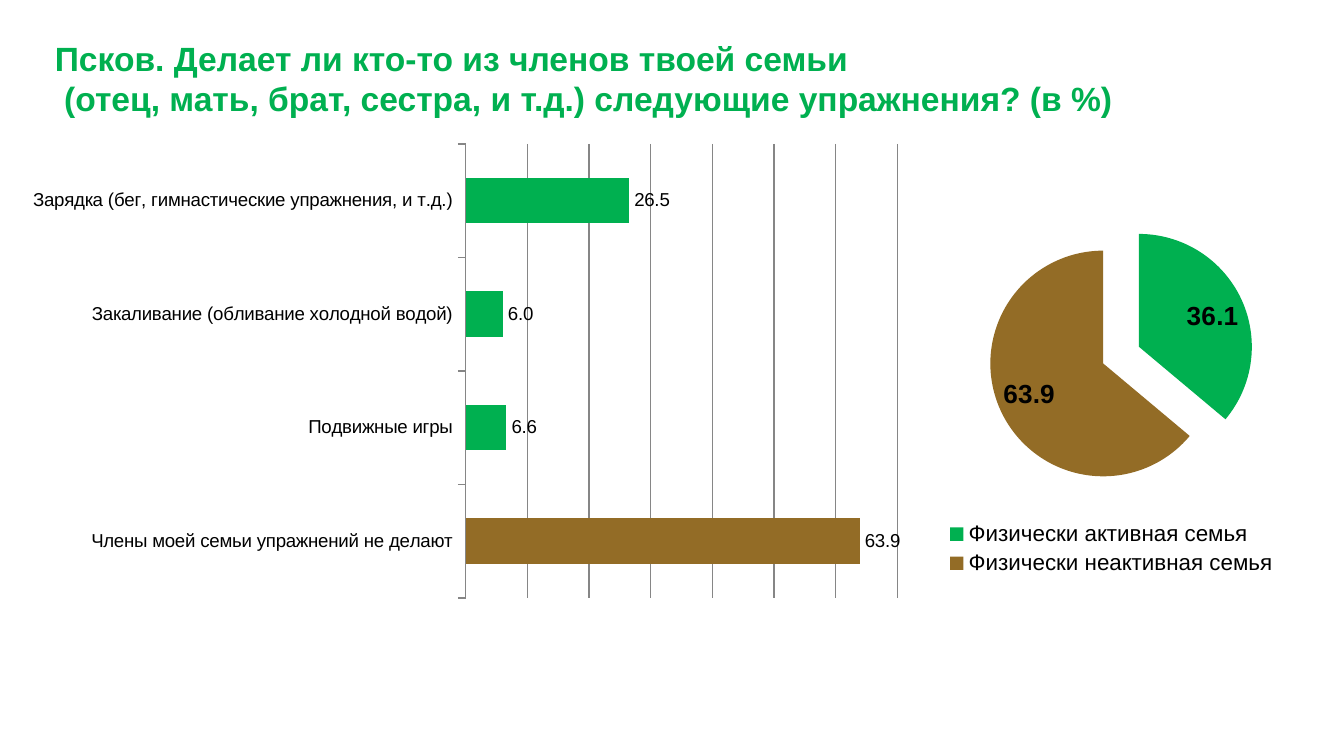
from lxml import etree
from pptx import Presentation
from pptx.chart.data import CategoryChartData
from pptx.dml.color import RGBColor
from pptx.enum import chart as ch, text
from pptx.oxml.ns import qn
from pptx.util import Inches, Pt

COLORS = {"active": "00B050", "inactive": "936C26", "text": "000000", "grid": "868686"}
TITLE = [
    "Псков. Делает ли кто-то из членов твоей семьи",
    " (отец, мать, брат, сестра, и т.д.) следующие упражнения? (в %)",
]
EXERCISES = {
    "box": (0.12, 1, 6.69, 3.52),
    "kind": ch.XL_CHART_TYPE.BAR_CLUSTERED,
    "plot": (0.5, 0.02, 0.48, 0.96),
    "points": [
        ("Зарядка (бег, гимнастические упражнения, и т.д.)", 26.5, "active"),
        ("Закаливание (обливание холодной водой)", 6, "active"),
        ("Подвижные игры", 6.6, "active"),
        ("Члены моей семьи упражнений не делают", 63.9, "inactive"),
    ],
    "label": {"size": Pt(10), "bold": False},
    "position": ch.XL_LABEL_POSITION.OUTSIDE_END,
}
FAMILIES = {
    "box": (6.73, 1.32, 3.08, 3),
    "kind": ch.XL_CHART_TYPE.PIE,
    "plot": (0.04, 0.1, 0.93, 0.7),
    "points": [
        ("Физически активная семья", 36.1, "active"),
        ("Физически неактивная семья", 63.9, "inactive"),
    ],
    "label": {"size": Pt(14), "bold": True},
    "position": ch.XL_LABEL_POSITION.BEST_FIT,
}
SERIES_EXPLOSION, INACTIVE_EXPLOSION = 25, 10


def rgb(name):
    return RGBColor.from_string(COLORS[name])


def set_font(font, color, **values):
    font.color.rgb = rgb(color)
    for name, value in {"name": "Arial", **values}.items():
        setattr(font, name, value)


def set_plot_area(chart, plot):
    area = chart.plots[0]._element.getparent()
    for old in area.findall(qn("c:layout")):
        area.remove(old)
    layout = etree.Element(qn("c:layout"))
    manual = etree.SubElement(layout, qn("c:manualLayout"))
    values = [("layoutTarget", "inner"), ("xMode", "edge"), ("yMode", "edge")]
    values += zip("xywh", plot)
    for tag, value in values:
        etree.SubElement(manual, qn(f"c:{tag}")).set("val", str(value))
    area.insert(0, layout)


def explode_before(element, percent):
    explosion = etree.Element(qn("c:explosion"))
    explosion.set("val", str(percent))
    element.addprevious(explosion)


def add_chart(s, item):
    data = CategoryChartData(number_format="0.0")
    data.categories = [label for label, _, _ in item["points"]]
    data.add_series("Series 1", [value for _, value, _ in item["points"]])
    box = map(Inches, item["box"])
    chart = s.shapes.add_chart(item["kind"], *box, data).chart
    chart.has_title = False
    chart.has_legend = False
    set_font(chart.font, "text", size=Pt(10))
    set_plot_area(chart, item["plot"])
    plot = chart.plots[0]
    plot.vary_by_categories = False
    for i, (_, _, color) in enumerate(item["points"]):
        fill = plot.series[0].points[i].format.fill
        fill.solid()
        fill.fore_color.rgb = rgb(color)
    plot.has_data_labels = True
    labels = plot.data_labels
    set_font(labels.font, "text", **item["label"])
    options = {
        "show_value": True,
        "number_format": "0.0",
        "number_format_is_linked": False,
        "position": item["position"],
    }
    for name, value in options.items():
        setattr(labels, name, value)
    return chart


prs = Presentation()
prs.slide_width = Inches(10)
prs.slide_height = prs.slide_width * 9 // 16
s = prs.slides.add_slide(prs.slide_layouts[6])

tf = s.shapes.add_textbox(*map(Inches, (0.31, 0.23, 9.38, 0.7))).text_frame
tf.word_wrap = True
tf.vertical_anchor = text.MSO_ANCHOR.MIDDLE
for i, line in enumerate(TITLE):
    p = tf.add_paragraph() if i else tf.paragraphs[0]
    r = p.add_run()
    r.text = line
    set_font(r.font, "active", size=Pt(18), bold=True)

bars = add_chart(s, EXERCISES)
bars.plots[0].gap_width = 150
series = bars.plots[0].series[0]
series.invert_if_negative = False
series.format.fill.solid()
series.format.fill.fore_color.rgb = rgb("active")
axis = bars.category_axis
axis.reverse_order = True
axis.major_tick_mark = ch.XL_TICK_MARK.OUTSIDE
values = bars.value_axis
values.visible = False
values.has_major_gridlines = True
values.minimum_scale, values.maximum_scale, values.major_unit = 0, 70, 10
for line in (axis.format.line, values.major_gridlines.format.line):
    line.color.rgb = rgb("grid")
    line.width = Pt(0.75)

pie = add_chart(s, FAMILIES)
pie.plots[0].vary_by_categories = True
active, inactive = pie.plots[0].series[0]._element.findall(qn("c:dPt"))
explode_before(active, SERIES_EXPLOSION)
explode_before(inactive.find(qn("c:spPr")), INACTIVE_EXPLOSION)
pie.has_legend = True
pie.legend.position = ch.XL_LEGEND_POSITION.BOTTOM
pie.legend.include_in_layout = False
set_font(pie.legend.font, "text", size=Pt(12))

prs.save("out.pptx")
